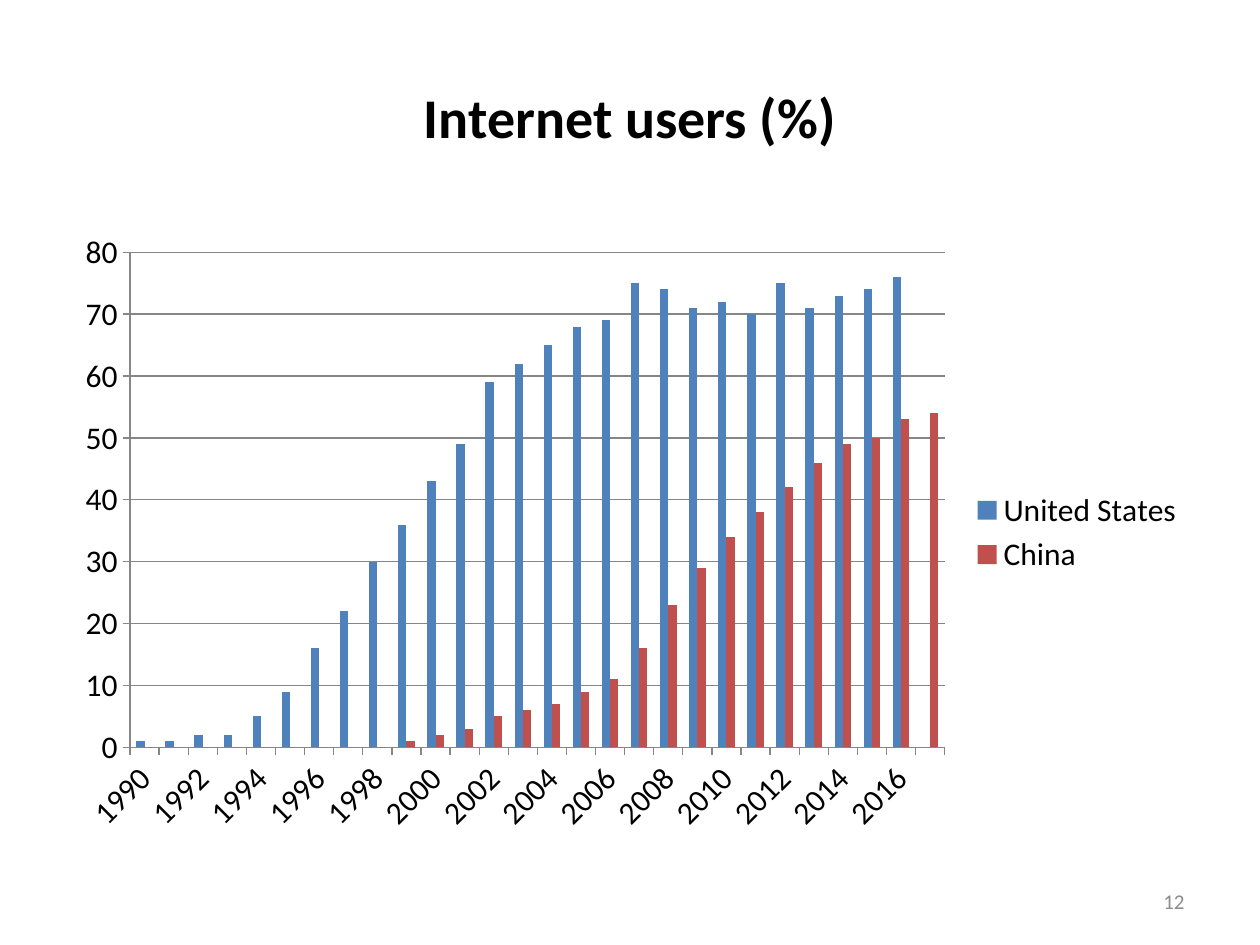
from dataclasses import dataclass

from pptx import Presentation
from pptx.chart.data import CategoryChartData
from pptx.dml.color import RGBColor
from pptx.enum.chart import XL_CHART_TYPE, XL_LEGEND_POSITION, XL_TICK_MARK
from pptx.enum.text import MSO_ANCHOR, PP_ALIGN
from pptx.util import Cm, Pt

COLUMN = XL_CHART_TYPE.COLUMN_CLUSTERED
LEGEND_RIGHT = XL_LEGEND_POSITION.RIGHT
TICK_OUT = XL_TICK_MARK.OUTSIDE
MIDDLE = MSO_ANCHOR.MIDDLE
CENTER, RIGHT = PP_ALIGN.CENTER, PP_ALIGN.RIGHT

BLACK = RGBColor(0x00, 0x00, 0x00)
GRAY = RGBColor(0x8C, 0x8C, 0x8C)
AXIS = RGBColor(0x86, 0x86, 0x86)
BLUE = RGBColor(0x4F, 0x81, 0xBD)
RED = RGBColor(0xC0, 0x50, 0x4D)
FONT = "Calibri"


@dataclass
class Country:
    name: str
    users: list[int | None]
    color: RGBColor


YEARS = [str(year) for year in range(1990, 2018)]
COUNTRIES = [
    Country(
        "United States",
        [1, 1, 2, 2, 5, 9, 16, 22, 30, 36, 43, 49, 59, 62, 65, 68, 69, 75,
         74, 71, 72, 70, 75, 71, 73, 74, 76, None],
        BLUE,
    ),
    Country(
        "China",
        [0] * 9 + [1, 2, 3, 5, 6, 7, 9, 11, 16, 23, 29, 34, 38, 42, 46, 49,
                   50, 53, 54],
        RED,
    ),
]


def set_font(font, size: int, color: RGBColor, bold: bool = False) -> None:
    font.name = FONT
    font.size = Pt(size)
    font.bold = bold
    font.color.rgb = color


def write(sp, text: str, size: int, color: RGBColor, align, bold: bool = False) -> None:
    tf = sp.text_frame
    tf.word_wrap = True
    tf.vertical_anchor = MIDDLE
    p = tf.paragraphs[0]
    p.text = text
    p.alignment = align
    set_font(p.font, size, color, bold)


def style_line(line) -> None:
    line.color.rgb = AXIS
    line.width = Pt(0.75)


def add_users_chart(slide) -> None:
    data = CategoryChartData()
    data.categories = YEARS
    for country in COUNTRIES:
        data.add_series(country.name, country.users)
    chart = slide.shapes.add_chart(
        COLUMN, Cm(1.27), Cm(4.45), Cm(22.86), Cm(12.57), data
    ).chart
    set_font(chart.font, 18, BLACK)
    chart.has_title = False
    chart.has_legend = True
    chart.legend.position = LEGEND_RIGHT
    chart.legend.include_in_layout = False

    plot = chart.plots[0]
    plot.gap_width = 150
    plot.vary_by_categories = False
    for series, country in zip(plot.series, COUNTRIES):
        series.format.fill.solid()
        series.format.fill.fore_color.rgb = country.color

    for axis in (chart.category_axis, chart.value_axis):
        axis.major_tick_mark = TICK_OUT
        style_line(axis.format.line)
    chart.value_axis.has_major_gridlines = True
    style_line(chart.value_axis.major_gridlines.format.line)


def main() -> None:
    prs = Presentation()
    prs.slide_width, prs.slide_height = Cm(25.4), Cm(19.05)
    slide = prs.slides.add_slide(prs.slide_layouts[5])

    title = slide.shapes.title
    title.left, title.top = Cm(1.27), Cm(0.76)
    title.width, title.height = Cm(22.86), Cm(3.18)
    write(title, "Internet users (%)", 32, BLACK, CENTER, bold=True)

    add_users_chart(slide)

    number = slide.shapes.add_textbox(Cm(18.2), Cm(17.66), Cm(5.93), Cm(1.01))
    write(number, "12", 12, GRAY, RIGHT)

    prs.save("out.pptx")


if __name__ == "__main__":
    main()
